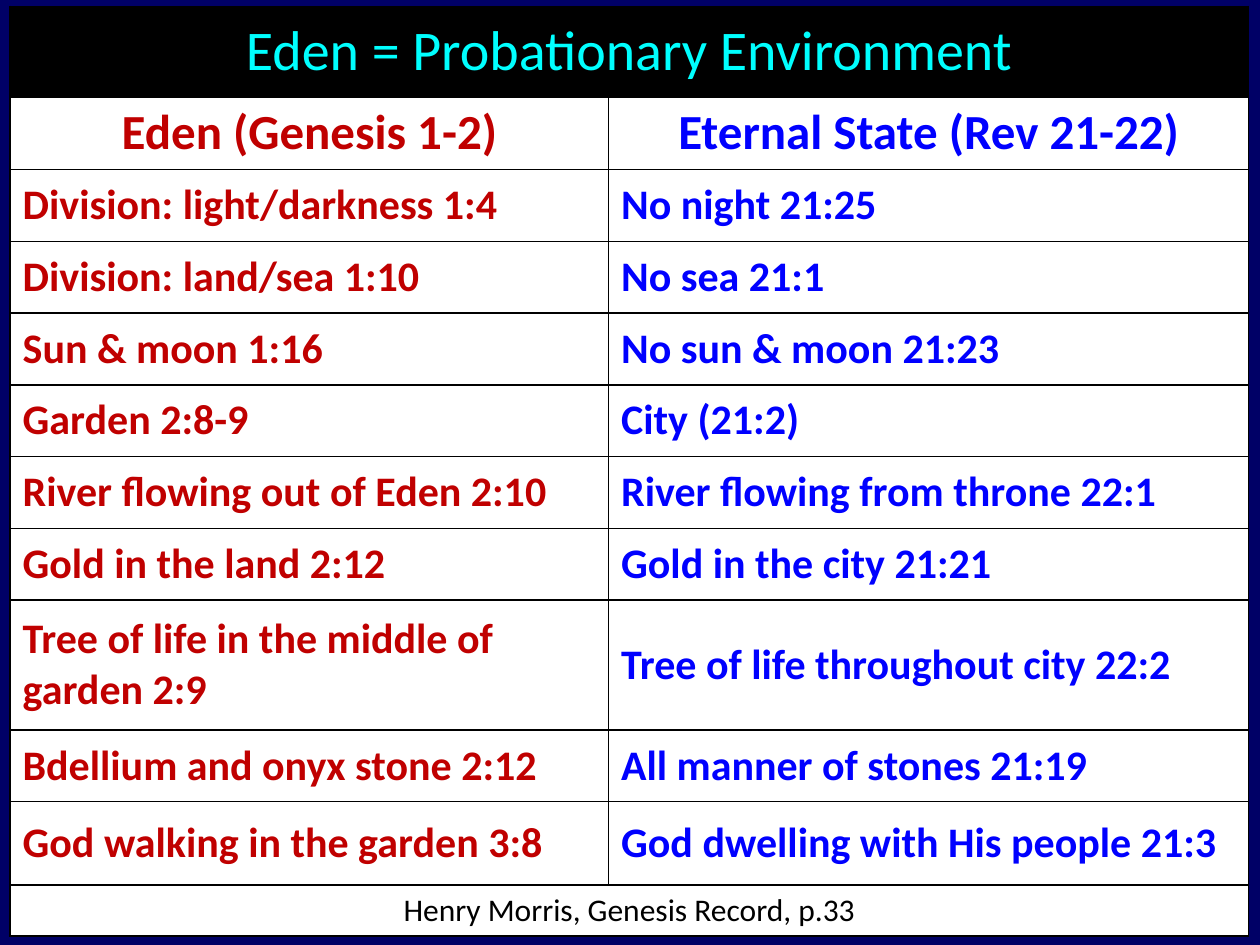
import pptx
import pptx.dml.color
import pptx.enum.text
import pptx.oxml
import pptx.oxml.ns
import pptx.util

COLORS = {
    "background": "000066",
    "title": "00FFFF",
    "eden": "C00000",
    "eternal": "0000FF",
    "black": "000000",
    "white": "FFFFFF",
}
FONT = "Calibri"
COLUMN_WIDTHS = [4.75, 5.08]
ROW_HEIGHTS = [0.72] + [0.57] * 7 + [1.03, 0.57, 0.66, 0.34]
TITLE = "Eden = Probationary Environment"
SOURCE = "Henry Morris, Genesis Record, p.33"
HEADINGS = ("Eden (Genesis 1-2)", "Eternal State (Rev 21-22)")
COMPARISONS = [
    ("Division: light/darkness 1:4", "No night 21:25"),
    ("Division: land/sea 1:10", "No sea 21:1"),
    ("Sun & moon 1:16", "No sun & moon 21:23"),
    ("Garden 2:8-9", "City (21:2)"),
    ("River flowing out of Eden 2:10", "River flowing from throne 22:1"),
    ("Gold in the land 2:12", "Gold in the city 21:21"),
    ("Tree of life in the middle of garden 2:9", "Tree of life throughout city 22:2"),
    ("Bdellium and onyx stone 2:12", "All manner of stones 21:19"),
    ("God walking in the garden 3:8", "God dwelling with His people 21:3"),
]


def rgb(name):
    return pptx.dml.color.RGBColor.from_string(COLORS[name])


def write_text(frame, text, size=24, color="black", bold=False, centered=False, after=3):
    para = frame.paragraphs[0]
    para.space_after = pptx.util.Pt(after)
    align = pptx.enum.text.PP_ALIGN
    para.alignment = align.CENTER if centered else align.LEFT
    span = para.add_run()
    span.text = text
    span.font.name = FONT
    span.font.size = pptx.util.Pt(size)
    span.font.bold = bold
    span.font.color.rgb = rgb(color)


def style_cell(cell, fill="white"):
    properties = cell._tc.get_or_add_tcPr()
    for side in ("lnL", "lnR", "lnT", "lnB"):
        properties.append(pptx.oxml.parse_xml(
            f'<a:{side} {pptx.oxml.ns.nsdecls("a")} w="{pptx.util.Pt(1)}"><a:solidFill>'
            f'<a:srgbClr val="{COLORS["black"]}"/></a:solidFill></a:{side}>'
        ))
    cell.fill.solid()
    cell.fill.fore_color.rgb = rgb(fill)
    cell.vertical_anchor = pptx.enum.text.MSO_ANCHOR.MIDDLE


def add_comparison_table(page):
    frame = page.shapes.add_table(
        len(ROW_HEIGHTS), len(COLUMN_WIDTHS),
        pptx.util.Inches(0.08), pptx.util.Inches(0.05),
        pptx.util.Inches(sum(COLUMN_WIDTHS)), pptx.util.Inches(sum(ROW_HEIGHTS)),
    )
    table = frame.table
    table.first_row = False
    table.horz_banding = False
    for column, width in zip(table.columns, COLUMN_WIDTHS):
        column.width = pptx.util.Inches(width)
    for row, height in zip(table.rows, ROW_HEIGHTS):
        row.height = pptx.util.Inches(height)
    return table


def fill_full_row(table, row, text, fill="white", **text_format):
    first, last = table.cell(row, 0), table.cell(row, 1)
    for cell in (first, last):
        style_cell(cell, fill)
    first.merge(last)
    write_text(first.text_frame, text, centered=True, **text_format)


def fill_pair(table, row, texts, **text_format):
    for column, (text, color) in enumerate(zip(texts, ("eden", "eternal"))):
        cell = table.cell(row, column)
        style_cell(cell)
        write_text(cell.text_frame, text, color=color, bold=True, **text_format)


def main():
    deck = pptx.Presentation()
    deck.slide_width = pptx.util.Inches(10)
    deck.slide_height = pptx.util.Inches(7.5)
    page = deck.slides.add_slide(deck.slide_layouts[6])
    page.background.fill.solid()
    page.background.fill.fore_color.rgb = rgb("background")

    table = add_comparison_table(page)
    fill_full_row(table, 0, TITLE, fill="black", size=32, color="title")
    fill_pair(table, 1, HEADINGS, size=28, centered=True)
    for row, texts in enumerate(COMPARISONS, start=2):
        fill_pair(table, row, texts)
    fill_full_row(table, len(ROW_HEIGHTS) - 1, SOURCE, size=18, after=0)
    deck.save("out.pptx")


if __name__ == "__main__":
    main()
